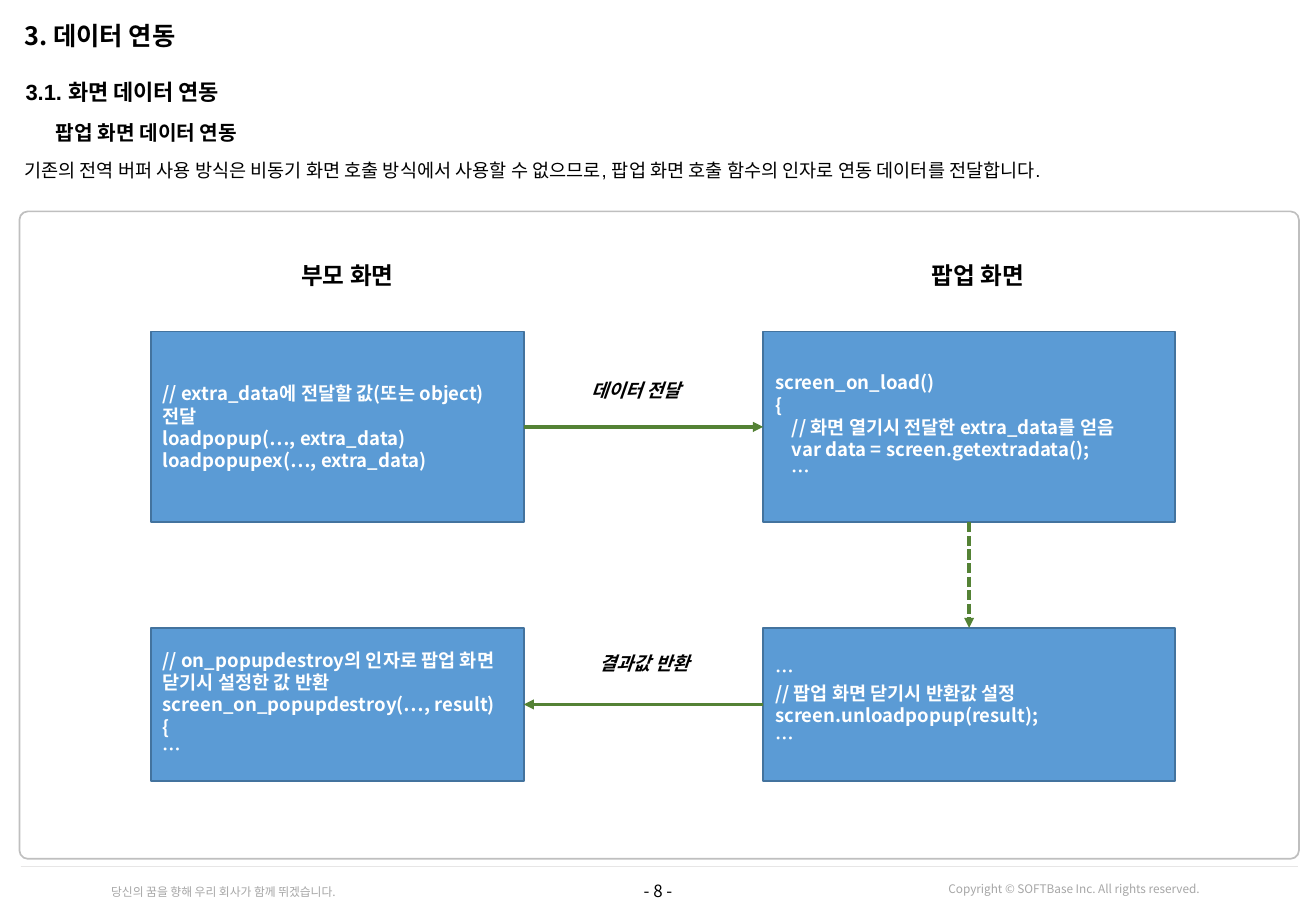
from dataclasses import dataclass
from typing import Any

from lxml.etree import SubElement
from pptx import Presentation
from pptx.dml.color import RGBColor
from pptx.enum.dml import MSO_LINE
from pptx.enum.shapes import MSO_CONNECTOR, MSO_SHAPE
from pptx.enum.text import MSO_ANCHOR, PP_ALIGN
from pptx.oxml.ns import qn
from pptx.util import Inches, Pt

COLORS = {
    "black": "000000",
    "white": "FFFFFF",
    "footer": "A6A6A6",
    "rule": "E7E6E6",
    "frame": "BFBFBF",
    "box": "5B9BD5",
    "box_line": "43739E",
    "arrow": "548235",
}
SANS = "Noto Sans CJK KR"
ARIAL = "Arial"
LINE_HEIGHT = 1.2

presentation = Presentation()
presentation.slide_width = Inches(10.83)
presentation.slide_height = Inches(7.5)
slide = presentation.slides.add_slide(presentation.slide_layouts[6])


@dataclass(frozen=True)
class Area:
    left: float
    top: float
    width: float
    height: float

    @property
    def right(self) -> float:
        return self.left + self.width

    @property
    def bottom(self) -> float:
        return self.top + self.height

    @property
    def center(self) -> float:
        return self.left + self.width / 2

    @property
    def middle(self) -> float:
        return self.top + self.height / 2


@dataclass(frozen=True)
class Label:
    text: str
    area: Area
    style: dict[str, Any]


@dataclass(frozen=True)
class Line:
    start: tuple[float, float]
    end: tuple[float, float]
    color: str = "arrow"
    width: float = 2
    dashed: bool = False
    arrow: bool = True


def across(percent: float) -> int:
    return round(presentation.slide_width * percent / 100)


def down(percent: float) -> int:
    return round(presentation.slide_height * percent / 100)


def bounds(area: Area) -> tuple[int, int, int, int]:
    return across(area.left), down(area.top), across(area.width), down(area.height)


def write(shape: Any, text: str, *, size: float, font: str = SANS,
          color: str = "black", bold: bool = False, italic: bool = False,
          align: PP_ALIGN = PP_ALIGN.LEFT, anchor: MSO_ANCHOR = MSO_ANCHOR.TOP,
          wrap: bool = True, inset: float | None = None) -> None:
    frame = shape.text_frame
    frame.word_wrap = wrap
    frame.vertical_anchor = anchor
    if inset is not None:
        frame.margin_left = frame.margin_right = Inches(inset)
        frame.margin_top = frame.margin_bottom = Inches(inset)
    frame.text = text
    for paragraph in frame.paragraphs:
        paragraph.alignment = align
        paragraph.line_spacing = Pt(size * LINE_HEIGHT)
        for run in paragraph.runs:
            run.font.size = Pt(size)
            run.font.bold = bold
            run.font.italic = italic
            run.font.color.rgb = RGBColor.from_string(COLORS[color])
            run.font.name = font
            SubElement(run._r.get_or_add_rPr(), qn("a:ea"), typeface=SANS)


def add_label(label: Label) -> None:
    write(slide.shapes.add_textbox(*bounds(label.area)), label.text, **label.style)


def add_panel(kind: MSO_SHAPE, area: Area, line: str, fill: str | None = None) -> Any:
    shape = slide.shapes.add_shape(kind, *bounds(area))
    shape.shadow.inherit = False
    if fill:
        shape.fill.solid()
        shape.fill.fore_color.rgb = RGBColor.from_string(COLORS[fill])
    else:
        shape.fill.background()
    shape.line.color.rgb = RGBColor.from_string(COLORS[line])
    shape.line.width = Pt(1)
    return shape


def add_line(line: Line) -> None:
    connector = slide.shapes.add_connector(
        MSO_CONNECTOR.STRAIGHT, across(line.start[0]), down(line.start[1]),
        across(line.end[0]), down(line.end[1]))
    connector.line.color.rgb = RGBColor.from_string(COLORS[line.color])
    connector.line.width = Pt(line.width)
    if line.dashed:
        connector.line.dash_style = MSO_LINE.SQUARE_DOT
    properties = connector.element.spPr
    if line.arrow:
        SubElement(properties.find(qn("a:ln")), qn("a:tailEnd"), type="triangle")
    SubElement(properties, qn("a:effectLst"))


FOOTER = {"size": 7, "color": "footer", "align": PP_ALIGN.RIGHT,
          "anchor": MSO_ANCHOR.MIDDLE}
PAGE = {"size": 10, "align": PP_ALIGN.CENTER, "anchor": MSO_ANCHOR.MIDDLE}
HEADING = {"bold": True, "inset": 0.04}
COLUMN_TITLE = {"size": 14, "font": ARIAL, "bold": True,
                "align": PP_ALIGN.CENTER, "wrap": False}
ARROW_TITLE = COLUMN_TITLE | {"size": 11, "italic": True}

LABELS = [
    Label("- 8 -", Area(0, 95.73, 100, 4.13), PAGE),
    Label("Copyright © SOFTBase Inc. All rights reserved.",
          Area(71.1, 96.13, 20.96, 2.93), FOOTER),
    Label("당신의 꿈을 향해 우리 회사가 함께 뛰겠습니다.",
          Area(5.36, 96.4, 21.05, 2.93), FOOTER),
    Label("3. 데이터 연동", Area(1.48, 1.73, 97.41, 4.53), HEADING | {"size": 15}),
    Label("기존의 전역 버퍼 사용 방식은 비동기 화면 호출 방식에서 사용할 수 없으므로, "
          "팝업 화면 호출 함수의 인자로 연동 데이터를 전달합니다.",
          Area(1.48, 16.93, 97.41, 5.47), {"size": 11, "font": ARIAL, "inset": 0.04}),
    Label("3.1. 화면 데이터 연동", Area(1.57, 8.13, 97.32, 3.73),
          HEADING | {"size": 13, "font": ARIAL}),
    Label("팝업 화면 데이터 연동", Area(3.88, 12.67, 95.01, 3.73), HEADING | {"size": 12}),
    Label("부모 화면", Area(21.51, 28, 9.79, 4.53), COLUMN_TITLE),
    Label("팝업 화면", Area(69.44, 28, 9.79, 4.53), COLUMN_TITLE),
    Label("데이터 전달", Area(43.58, 40.93, 9.51, 3.87), ARROW_TITLE),
    Label("결과값 반환", Area(44.23, 70.93, 9.51, 3.87), ARROW_TITLE),
]

COLUMNS = [(11.45, 28.35), (57.99, 31.3)]
ROWS = [(36.4, 20.93), (68.93, 16.8)]
CODE = [
    ["// extra_data에 전달할 값(또는 object) 전달\n"
     "loadpopup(…, extra_data)\nloadpopupex(…, extra_data)",
     "screen_on_load()\n{\n    // 화면 열기시 전달한 extra_data를 얻음\n"
     "    var data = screen.getextradata();\n    …"],
    ["// on_popupdestroy의 인자로 팝업 화면 닫기시 설정한 값 반환\n"
     "screen_on_popupdestroy(…, result)\n{\n…",
     "…\n// 팝업 화면 닫기시 반환값 설정\nscreen.unloadpopup(result);\n…"],
]
(parent_open, popup_open), (parent_close, popup_close) = [
    [Area(left, top, width, height) for left, width in COLUMNS] for top, height in ROWS
]
LINES = [
    Line((1.57, 95.07), (98.61, 95.07), "rule", 0.5, arrow=False),
    Line((popup_open.center, popup_open.bottom),
         (popup_open.center, popup_close.top), dashed=True),
    Line((parent_open.right, parent_open.middle), (popup_open.left, popup_open.middle)),
    Line((popup_close.left, popup_close.middle), (parent_close.right, parent_close.middle)),
]

outer_frame = add_panel(MSO_SHAPE.ROUNDED_RECTANGLE, Area(1.48, 23.2, 97.23, 71.07), "frame")
outer_frame.adjustments[0] = 0.013
for codes, areas in zip(CODE, [(parent_open, popup_open), (parent_close, popup_close)]):
    for code, area in zip(codes, areas):
        write(add_panel(MSO_SHAPE.RECTANGLE, area, "box_line", "box"), code,
              size=11, color="white", bold=True, anchor=MSO_ANCHOR.MIDDLE)
for line in LINES:
    add_line(line)
for label in LABELS:
    add_label(label)

presentation.save("out.pptx")
